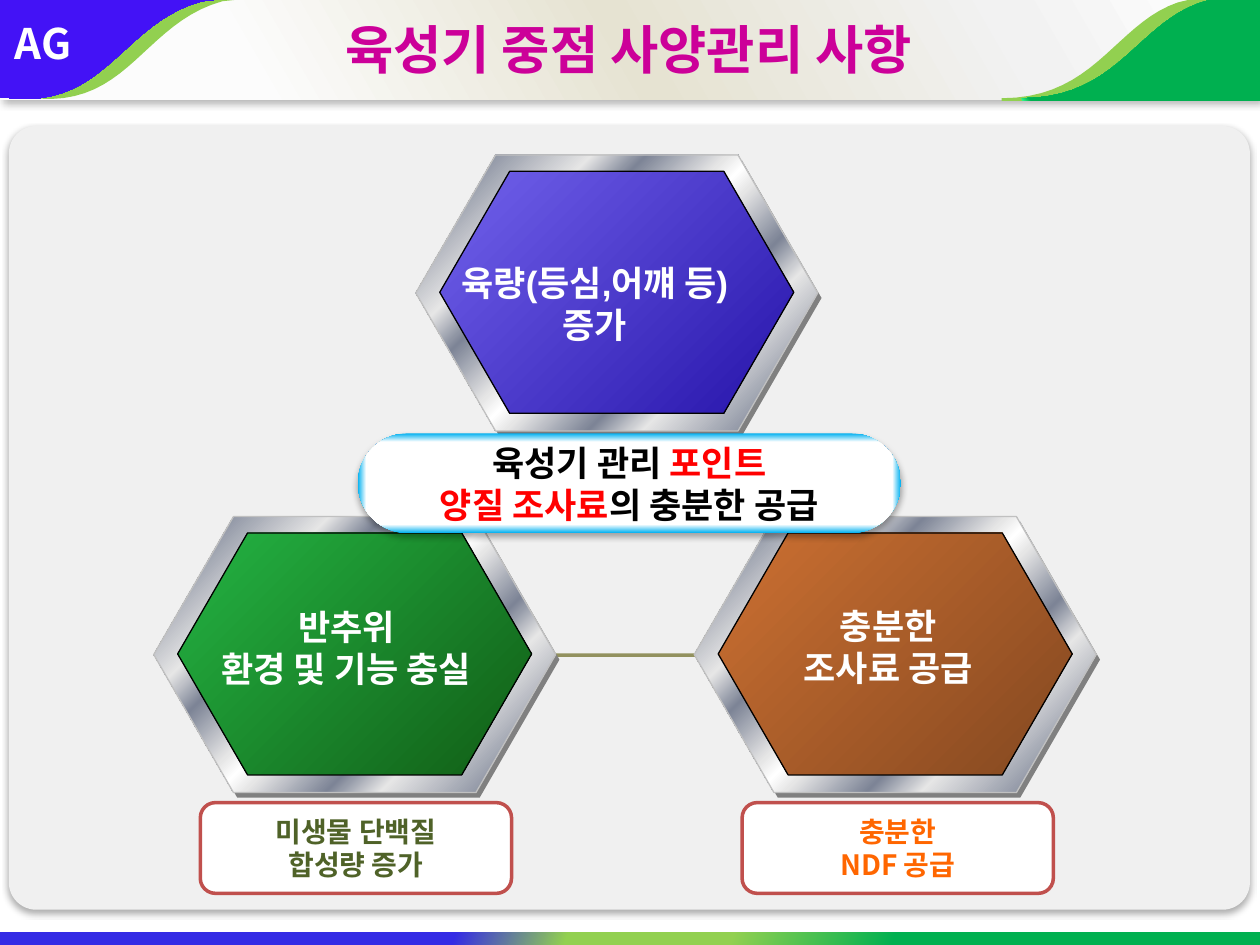
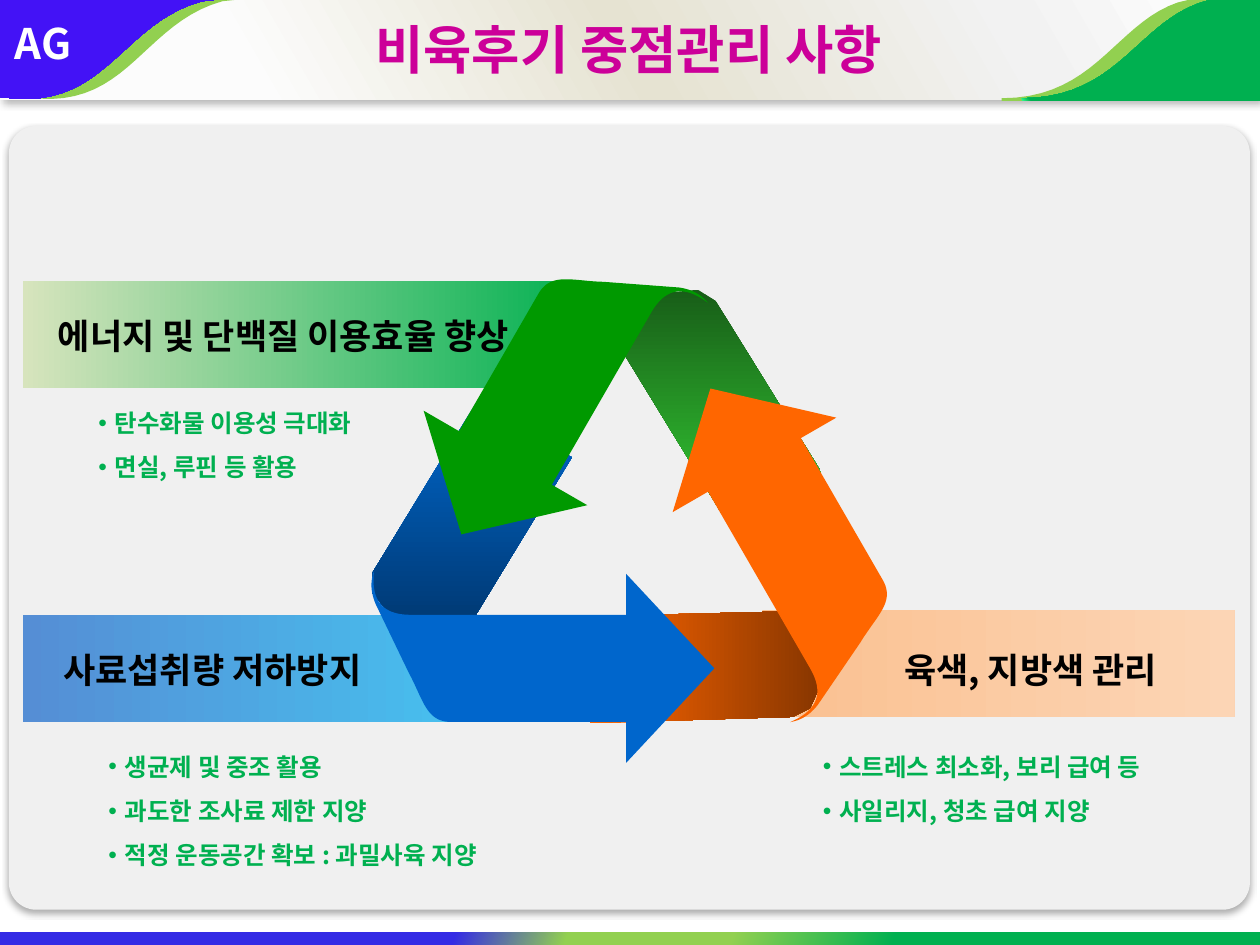
"""Build two slides on key feeding points for growing and late-fattening cattle."""
import math
import pptx
import pptx.dml.color
import pptx.enum.shapes
import pptx.enum.text
import pptx.oxml
import pptx.oxml.ns
import pptx.util

KIND = pptx.enum.shapes.MSO_SHAPE
ALIGN = pptx.enum.text.PP_ALIGN
ANCHOR = pptx.enum.text.MSO_ANCHOR
FIXED = pptx.enum.text.MSO_AUTO_SIZE.NONE
SPACE = 'xmlns:a="http://schemas.openxmlformats.org/drawingml/2006/main"'
FACE = "Noto Sans CJK KR"
WIDTH, HEIGHT = 10, 7.5

WHITE, BLACK, RED, GRAY = "FFFFFF", "000000", "FF0000", "808080"
LIME, LEAF, PINK = "92D050", "00B050", "CC0099"
GREEN, ORANGE, BLUE = "009900", "FF6600", "0066CC"
PANEL, OLIVE, BRICK, SILVER = "F0F0F0", "92915E", "C0504D", "C0C0C0"

BRAND = "AG"
TITLES = ["육성기 중점 사양관리 사항", "비육후기 중점관리 사항"]


def span(angle, light, dark):
    return angle, [(0, light), (100, dark)]


STEEL = (45, [(0, "E6E6E6"), (8, "7D8496"), (26, "E6E6E6"), (34, "7D8496"),
              (46, "E6E6E6"), (50, WHITE), (54, "E6E6E6"), (66, "7D8496"),
              (74, "E6E6E6"), (92, "7D8496"), (100, "E6E6E6")])
SHEEN = (150, [(0, WHITE), (20, "F2F2F2"), (50, "E6E3D2"), (80, "FCFCFC"), (99, WHITE)])
STRIPE = (20, [(36, "342BE5"), (45, LIME), (58, LIME), (71, LEAF)])
GLOW = (None, [(0, WHITE), (83, WHITE), (100, "00B0F0")])
SOFT = {"alpha": 32, "blur": 3.5, "dist": 2.2, "angle": 90}
DEEP = {"alpha": 30, "blur": 4.5, "dist": 2.6, "angle": 53}

WAVES = [
    (LIME, [(0.19, 0), [(2.08, -0.03), (1.13, -0.03), (1.13, 0.92), (0.19, 0.77)]]),
    ((135, [(0, "37FF92"), (6, "4312F6")]),
     [(0, 0), [(1.92, -0.03), (0.96, -0.03), (0.96, 0.92), (0, 0.77)]]),
    (LIME, [(9.83, 0.8), (7.95, 0.8),
            [(7.95, 0.78), (8.89, 0.78), (8.89, -0.16), (9.83, -0.01)]]),
    ((315, [(0, "37FF92"), (3, LEAF)]),
     [(10, 0.8), (8.11, 0.8), [(8.11, 0.78), (9.06, 0.78), (9.05, -0.13), (10, -0.02)]]),
]

HEXES = [
    {"at": (3.3, 1.23), "tint": ("7262EC", "2614AA"), "text": (4.72, 2.03),
     "lines": ["육량(등심,어꺠 등)", "증가"]},
    {"at": (1.22, 4.1), "tint": ("24B443", "115D16"), "text": (2.75, 4.76),
     "lines": ["반추위", "환경 및 기능 충실"]},
    {"at": (5.51, 4.1), "tint": ("CC7032", "844820"), "text": (7.05, 4.75),
     "lines": ["충분한", "조사료 공급"]},
]
RIM, CORE = (3.19, 2.19), (2.81, 1.92)
LABELS = [
    (5.89, ORANGE, ["충분한", "NDF 공급"]),
    (1.59, "4F6228", ["미생물 단백질", "합성량 증가"]),
]
POINT = [[("육성기 관리 ", BLACK), ("포인트", RED)],
         [("양질 조사료", RED), ("의 충분한 공급", BLACK)]]

TOPICS = [
    {"band": (0.18, 2.23, 4.52, 0.85), "tint": ("D7E4BD", LEAF),
     "head": "에너지 및 단백질 이용효율 향상", "spot": (0.12, 2.45, 4.26, 0.44),
     "list": ["탄수화물 이용성 극대화", "면실, 루핀 등 활용"],
     "area": (0.67, 3.07, 2.6, 0.82)},
    {"band": (6.05, 4.84, 3.75, 0.85), "tint": ("FAC090", "FCD5B5"),
     "head": "육색, 지방색 관리", "spot": (6.96, 5.1, 2.44, 0.44),
     "list": ["스트레스 최소화, 보리 급여 등", "사일리지, 청초 급여 지양"],
     "area": (6.42, 5.8, 3.23, 0.82)},
    {"band": (0.18, 4.88, 3.75, 0.85), "tint": ("558ED5", "46C3F0"),
     "head": "사료섭취량 저하방지", "spot": (0.18, 5.1, 3.01, 0.44),
     "list": ["생균제 및 중조 활용", "과도한 조사료 제한 지양", "적정 운동공간 확보 : 과밀사육 지양"],
     "area": (0.75, 5.8, 3.79, 1.17)},
]

ARROWS = [
    {"fill": BLUE, "hub": (4.99, 4.21), "turn": 0, "trim": 0,
     "shade": span(90, BLUE, "002F5E"),
     "fold": [(4.54, 3.63), (3.49, 5.35), (2.95, 4.7), (2.96, 4.54), (3.77, 3.21)]},
    {"fill": GREEN, "hub": (4.95, 4.2), "turn": 120, "trim": 0.13,
     "shade": span(90, "185E18", "33CC33"),
     "fold": [(5.78, 4.16), (4.69, 2.38), (5.54, 2.3), (5.68, 2.39), (6.52, 3.75)]},
    {"fill": ORANGE, "hub": (5.03, 4.22), "turn": 240, "trim": 0.09,
     "shade": span(0, ORANGE, "762F00"),
     "fold": [(4.7, 4.89), (6.78, 4.84), (6.43, 5.62), (6.29, 5.69), (4.68, 5.74)]},
]
INNER, OUTER = 0.67, 1.52
NECK, TIP, WING = -0.02, 0.68, 0.75
SHOULDER = [(-1.41, OUTER), (-1.61, OUTER), (-1.63, 1.34), (-1.75, 1.12)]
KNEE = [(-2.01, 0.58), (-2.05, 0.48), (-2.05, 0.4), (-2.02, 0.32)]
CREASE = [(-2.02, 0.32), (-2.05, 0.57), (-1.94, INNER), (-1.73, INNER)]


def dim(inch):
    return pptx.util.Cm(2.54 * inch)


def tone(text):
    return pptx.dml.color.RGBColor.from_string(text)


def apply(thing, looks):
    for name, value in looks.items():
        setattr(thing, name, value)


def node(text):
    return pptx.oxml.parse_xml(text.replace(">", f" {SPACE}>", 1))


def place(shape, box):
    apply(shape, dict(zip(("left", "top", "width", "height"), map(dim, box))))


def blend(shape, angle, stops):
    shape.fill.gradient()
    grad = shape.element.spPr.find(pptx.oxml.ns.qn("a:gradFill"))
    grad.clear()
    marks = "".join(f'<a:gs pos="{pos * 1000}"><a:srgbClr val="{shade}"/></a:gs>'
                    for pos, shade in stops)
    grad.append(node(f"<a:gsLst>{marks}</a:gsLst>"))
    if angle is None:
        rim = " ".join(f'{side}="50000"' for side in "ltrb")
        grad.append(node(f'<a:path path="shape"><a:fillToRect {rim}/></a:path>'))
    else:
        grad.append(node(f'<a:lin ang="{angle * 60000}" scaled="0"></a:lin>'))


def drop(shape, alpha, blur, dist, angle):
    shape.element.spPr.find(pptx.oxml.ns.qn("a:effectLst")).append(node(
        f'<a:outerShdw blurRad="{int(blur * 12700)}" dist="{int(dist * 12700)}" '
        f'dir="{angle * 60000}" algn="ctr" rotWithShape="0"><a:srgbClr val="{BLACK}">'
        f'<a:alpha val="{alpha * 1000}"/></a:srgbClr></a:outerShdw>'))


def paint(shape, fill, line=None, cast=None):
    shape.shadow.inherit = False
    if fill is None:
        shape.fill.background()
    elif isinstance(fill, str):
        shape.fill.solid()
        shape.fill.fore_color.rgb = tone(fill)
    else:
        blend(shape, *fill)
    if line:
        shade, weight = line
        shape.line.color.rgb = tone(shade)
        shape.line.width = pptx.util.Pt(weight)
    else:
        shape.line.fill.background()
    if cast:
        drop(shape, **cast)


def draw(slide, kind, box, fill, line=None, cast=None, adjust=()):
    shape = slide.shapes.add_shape(kind, *map(dim, box))
    for spot, value in enumerate(adjust):
        shape.adjustments[spot] = value
    paint(shape, fill, line, cast)
    return shape


def curve(ends, steps=24):
    for step in range(steps + 1):
        t = step / steps
        parts = ((1 - t) ** 3, 3 * t * (1 - t) ** 2, 3 * t * t * (1 - t), t ** 3)
        yield tuple(sum(p * end[axis] for p, end in zip(parts, ends)) for axis in (0, 1))


def flat(route):
    for part in route:
        if isinstance(part, list):
            yield from curve(part)
        else:
            yield part


def trace(slide, points, fill):
    spots = [(dim(x), dim(max(0, y))) for x, y in points]
    pen = slide.shapes.build_freeform(*spots[0])
    pen.add_line_segments(spots[1:], close=True)
    paint(pen.convert_to_shape(), fill)


def spin(points, hub, turn):
    cos, sin = math.cos(math.radians(turn)), math.sin(math.radians(turn))
    for x, y in points:
        yield hub[0] + x * cos - y * sin, hub[1] + x * sin + y * cos


def arrow(trim):
    mid = (INNER + OUTER) / 2
    head = [(NECK, INNER), (NECK, mid - WING), (TIP, mid), (NECK, mid + WING), (NECK, OUTER)]
    return head + [(x + trim, y) for x, y in flat([SHOULDER, KNEE, CREASE])]


def write(shape, lines, size, shade, face=FACE, align=ALIGN.CENTER,
          anchor=ANCHOR.TOP, dots=False):
    frame = shape.text_frame
    side = dim(0.11 if dots else 0.1)
    apply(frame, {"word_wrap": True, "auto_size": FIXED, "vertical_anchor": anchor,
                  "margin_left": side, "margin_right": side})
    for spot, line in enumerate(lines):
        para = frame.add_paragraph() if spot else frame.paragraphs[0]
        if dots:
            prop = para._p.get_or_add_pPr()
            prop.set("marL", str(dim(0.13)))
            prop.set("indent", str(-dim(0.13)))
            prop.append(node('<a:buChar char="•"></a:buChar>'))
        apply(para, {"alignment": align, "line_spacing": 1.5 if dots else 1.0,
                     "space_before": pptx.util.Pt(0)})
        for text, hue in [(line, shade)] if isinstance(line, str) else line:
            run = para.add_run()
            run.text = text
            apply(run.font, {"size": pptx.util.Pt(size), "bold": True, "name": face})
            run.font.color.rgb = tone(hue)
            run._r.get_or_add_rPr().append(node(f'<a:ea typeface="{FACE}"></a:ea>'))


def label(slide, box, lines, size, shade, **looks):
    write(slide.shapes.add_textbox(*map(dim, box)), lines, size, shade, **looks)


def start(deck, layout, title):
    slide = deck.slides.add_slide(deck.slide_layouts[layout])
    draw(slide, KIND.ROUNDED_RECTANGLE, (0.07, 1, 9.85, 6.22), PANEL,
         cast=SOFT, adjust=[0.035])
    draw(slide, KIND.RECTANGLE, (0, HEIGHT - 0.1, WIDTH, 0.1), STRIPE)
    draw(slide, KIND.RECTANGLE, (0, 0, WIDTH, 0.79), SHEEN, cast=DEEP)
    for fill, route in WAVES:
        trace(slide, flat(route), fill)
    label(slide, (0.02, 0.09, 0.9, 0.51), [BRAND], 24, WHITE, align=ALIGN.LEFT)
    place(slide.shapes.title, (0, 0.08, 9.98, 0.61))
    write(slide.shapes.title, [title], 30, PINK, anchor=ANCHOR.MIDDLE)
    return slide


def finish(slide):
    for holder in list(slide.placeholders):
        tree = holder.element.getparent()
        if holder.text_frame.text:
            tree.append(holder.element)
        else:
            tree.remove(holder.element)


def grow(deck):
    slide = start(deck, 5, TITLES[0])
    draw(slide, KIND.ISOSCELES_TRIANGLE, (2.84, 2.29, 4.24, 2.91), None, (OLIVE, 2))
    for cell in HEXES:
        x, y = cell["at"]
        layers = [((x + 0.03, y + 0.04, *RIM), GRAY, None),
                  ((x, y, *RIM), STEEL, (SILVER, 0.75)),
                  ((x + 0.19, y + 0.13, *CORE), span(45, *cell["tint"]), (BLACK, 0.75))]
        for box, fill, line in layers:
            draw(slide, KIND.HEXAGON, box, fill, line, adjust=[0.289, 1.155])
        mid, top = cell["text"]
        label(slide, (mid - 1.25, top, 2.5, 1.1), cell["lines"], 20, WHITE, face="Arial")
    for x, shade, lines in LABELS:
        tag = draw(slide, KIND.ROUNDED_RECTANGLE, (x, 6.37, 2.47, 0.72), WHITE, (BRICK, 2))
        write(tag, lines, 16, shade, anchor=ANCHOR.MIDDLE)
    pill = draw(slide, KIND.ROUNDED_RECTANGLE, (2.84, 3.44, 4.31, 0.79), GLOW,
                cast=SOFT, adjust=[0.5])
    write(pill, POINT, 20, BLACK, anchor=ANCHOR.MIDDLE)
    finish(slide)


def fatten(deck):
    slide = start(deck, 4, TITLES[1])
    for topic in TOPICS:
        draw(slide, KIND.RECTANGLE, topic["band"], span(0, *topic["tint"]))
    for item in ARROWS:
        trace(slide, item["fold"], item["shade"])
    for item in ARROWS:
        trace(slide, spin(arrow(item["trim"]), item["hub"], item["turn"]), item["fill"])
    bodies = list(slide.placeholders)[1:]
    for topic, body in zip(TOPICS, bodies):
        label(slide, topic["spot"], [topic["head"]], 20, BLACK)
        place(body, topic["area"])
        write(body, topic["list"], 14, LEAF, align=ALIGN.LEFT, dots=True)
    finish(slide)


def main():
    deck = pptx.Presentation()
    apply(deck, {"slide_width": dim(WIDTH), "slide_height": dim(HEIGHT)})
    grow(deck)
    fatten(deck)
    deck.save("out.pptx")


if __name__ == "__main__":
    main()
